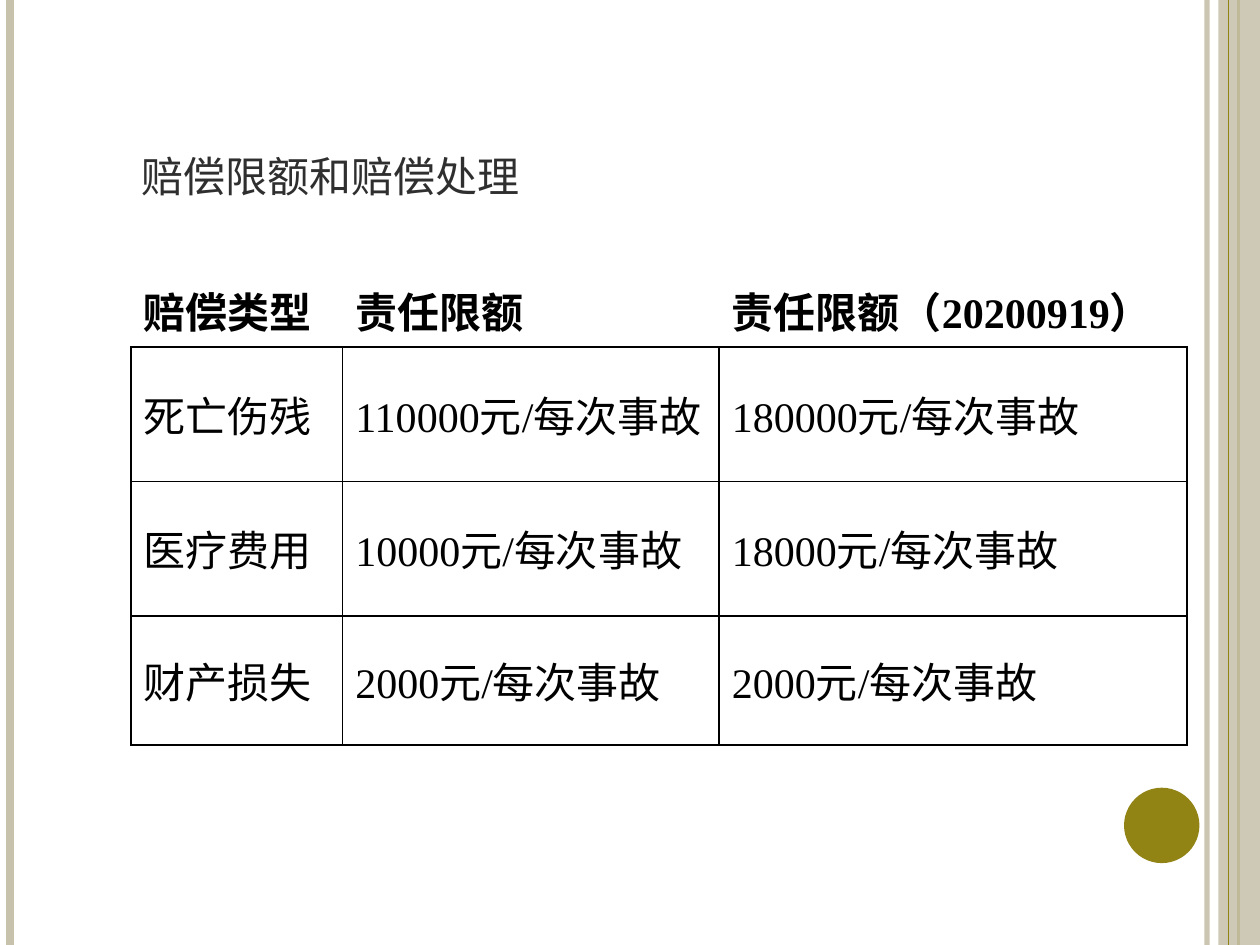
from lxml import etree
from pptx import Presentation
from pptx.dml.color import RGBColor
from pptx.enum.shapes import MSO_CONNECTOR, MSO_SHAPE
from pptx.enum.text import MSO_ANCHOR, MSO_AUTO_SIZE, PP_ALIGN
from pptx.oxml.ns import qn
from pptx.util import Cm, Pt

LINE = MSO_CONNECTOR.STRAIGHT
RECT, OVAL = MSO_SHAPE.RECTANGLE, MSO_SHAPE.OVAL
MID, BOTTOM = MSO_ANCHOR.MIDDLE, MSO_ANCHOR.BOTTOM
LEFT, FIXED = PP_ALIGN.LEFT, MSO_AUTO_SIZE.NONE

WIDE, HIGH = 25.4, 19.05
SAND, OLIVE, INK, WHITE = "C7C2AC", "918415", "000000", "FFFFFF"

TITLE = "赔偿限额和赔偿处理"
ROWS = [
    ("赔偿类型", "责任限额", "责任限额（20200919）"),
    ("死亡伤残", "110000元/每次事故", "180000元/每次事故"),
    ("医疗费用", "10000元/每次事故", "18000元/每次事故"),
    ("财产损失", "2000元/每次事故", "2000元/每次事故"),
]
COLS = [4.27, 7.59, 9.43]
TALLS = [0.48, 2.64, 2.6, 2.6]
HANG = 1.24

DECOR = [
    ("line", 24.33, SAND, 3, 93),
    ("line", 0.2, SAND, 4.5, 100),
    ("line", 24.97, OLIVE, 1.5, 100),
    (RECT, (24.56, 0, 0.84, HIGH), SAND, 0, 87),
    ("line", 24.77, OLIVE, 0.75, 100),
    (OVAL, (22.66, 15.88, 1.52, 1.52), OLIVE, 0, 100),
]
TITLE_FONT = {"name": "TeX Gyre Schola", "size": Pt(30), "bold": False}
CELL_FONT = {"name": "Times New Roman", "size": Pt(24)}


def tint(fmt, color, alpha=100):
    fmt.solid()
    fmt.fore_color.rgb = RGBColor.from_string(color)
    if alpha < 100:
        node = fmt.fore_color._xFill.find(qn("a:srgbClr"))
        etree.SubElement(node, qn("a:alpha"), val=str(alpha * 1000))


def style(font, form, color):
    for key, val in form.items():
        setattr(font, key, val)
    tint(font.fill, color)


def decor(shapes, kind, place, color, width, alpha):
    if kind == "line":
        bar = shapes.add_connector(LINE, Cm(place), 0, Cm(place), Cm(HIGH))
        bar.line.width = Pt(width)
        tint(bar.line.fill, color, alpha)
        etree.SubElement(bar._element.spPr, qn("a:effectLst"))
        return
    shape = shapes.add_shape(kind, *map(Cm, place))
    shape.shadow.inherit = False
    shape.line.fill.background()
    tint(shape.fill, color, alpha)


def border(cell, sides):
    props = cell._tc.get_or_add_tcPr()
    for spot, side in enumerate("LRTB"):
        edge = etree.Element(qn("a:ln" + side), w=str(Pt(1)))
        if side in sides:
            fill = etree.SubElement(edge, qn("a:solidFill"))
            etree.SubElement(fill, qn("a:srgbClr"), val=INK)
        else:
            etree.SubElement(edge, qn("a:noFill"))
        props.insert(spot, edge)


def fill_cell(cell, text, head):
    cell.vertical_anchor = MID
    para = cell.text_frame.paragraphs[0]
    props = para._p.get_or_add_pPr()
    props.set("marL", str(Cm(HANG)))
    props.set("indent", str(-Cm(HANG)))
    run = para.add_run()
    run.text = text
    style(run.font, {**CELL_FONT, "bold": head}, INK)
    if head:
        cell.fill.background()
    else:
        tint(cell.fill, WHITE)
    border(cell, "B" if head else "LRTB")


def add_title(title):
    title.left, title.top, title.width, title.height = map(
        Cm, (2.59, 0.28, 19.89, 3.94))
    frame = title.text_frame
    frame.text = TITLE
    for key, val in {"vertical_anchor": BOTTOM, "auto_size": FIXED,
                     "word_wrap": True}.items():
        setattr(frame, key, val)
    para = frame.paragraphs[0]
    para.alignment = LEFT
    run = para.runs[0]
    style(run.font, TITLE_FONT, "2F2F2F")
    run._r.get_or_add_rPr().set("cap", "small")


def add_grid(shapes):
    grid = shapes.add_table(len(ROWS), len(COLS), Cm(2.64), Cm(5.51),
                            Cm(sum(COLS)), Cm(sum(TALLS))).table
    grid.first_row = grid.horz_banding = False
    for col, width in zip(grid.columns, COLS):
        col.width = Cm(width)
    for r, (row, tall) in enumerate(zip(ROWS, TALLS)):
        grid.rows[r].height = Cm(tall)
        for c, text in enumerate(row):
            fill_cell(grid.cell(r, c), text, r == 0)


def main():
    deck = Presentation()
    deck.slide_width, deck.slide_height = Cm(WIDE), Cm(HIGH)
    slide = deck.slides.add_slide(deck.slide_layouts[5])
    for item in DECOR:
        decor(slide.shapes, *item)
    add_title(slide.shapes.title)
    add_grid(slide.shapes)
    deck.save("out.pptx")


if __name__ == "__main__":
    main()
